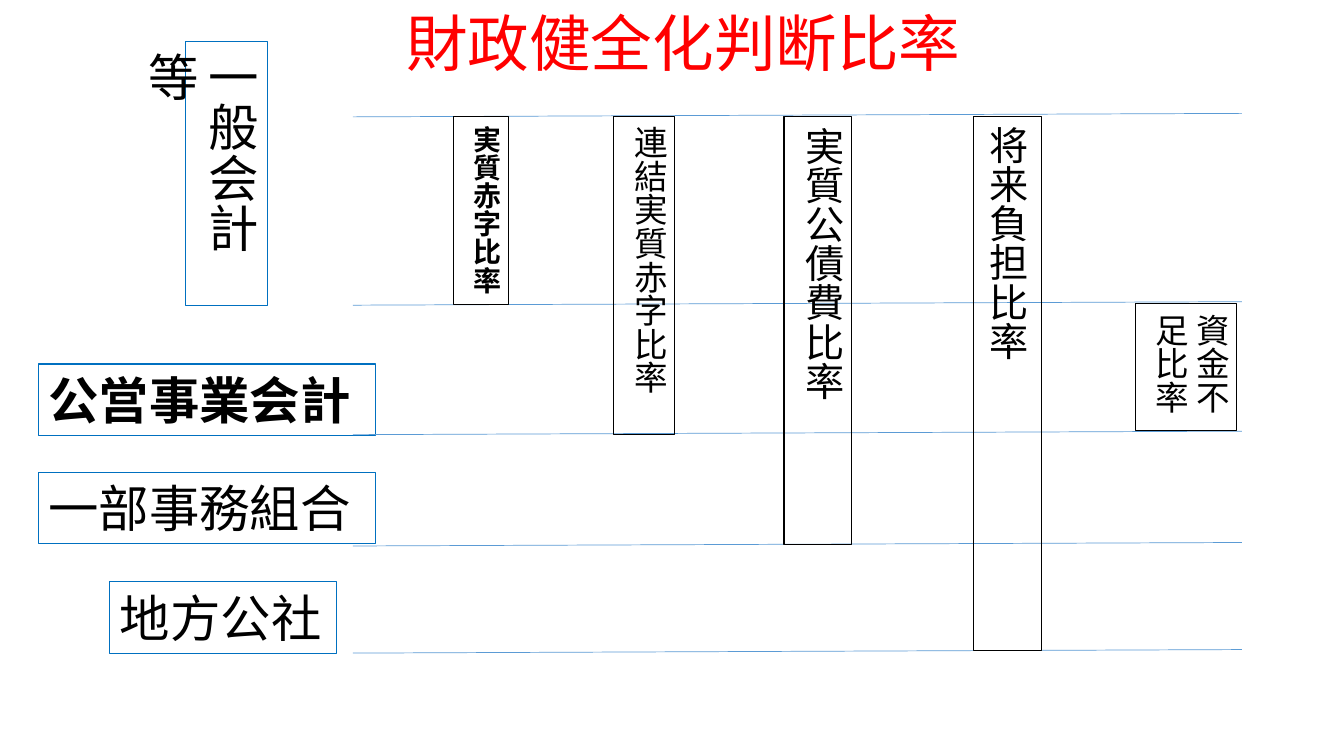
import pptx
import pptx.dml.color
import pptx.enum.shapes
import pptx.enum.text
import pptx.oxml.ns
import pptx.util
from lxml import etree

Pt = pptx.util.Pt
CENTER = pptx.enum.text.PP_ALIGN.CENTER
MIDDLE = pptx.enum.text.MSO_ANCHOR.MIDDLE

FONT = "Calibri"
RED, BLACK, BLUE, PALE_BLUE = "FF0000", "000000", "0070C0", "5B9BD5"

# Text, box (left, top, width, height), bold
HORIZONTAL_ACCOUNTS = [
    ("一部事務組合", (27.5, 337.5, 240.5, 51), False),
    ("地方公社", (78.5, 415.5, 162, 51), False),
    ("公営事業会計", (27.5, 260, 240.5, 51), True),
]

# Text, box, font size, bold, alignment, anchor
RATIOS = [
    ("実質赤字比率", (324, 83, 39, 134.5), 20, True, CENTER, None),
    ("連結実質赤字比率", (438, 83, 44, 227.5), 24, False, CENTER, None),
    ("実質公債費比率", (560, 83.5, 48.5, 305.5), 28, False, CENTER, None),
    ("将来負担比率", (695.5, 83, 48.5, 381.5), 28, False, CENTER, MIDDLE),
    ("資金不足比率", (811, 217, 72.5, 90.5), 24, False, None, None),
]

BOUNDARY_LEFT, BOUNDARY_RIGHT, BOUNDARY_RISE = 252, 887, 2.5
BOUNDARY_TOPS = [83.5, 218, 310.5, 390, 466.5]


def color(hex_value):
    return pptx.dml.color.RGBColor.from_string(hex_value)


def add_label(slide, text, box, size, font_color=BLACK, bold=False,
              border=None, vertical=False, alignment=None, anchor=None):
    """Add a text box, optionally bordered or with vertical East Asian text."""
    shape = slide.shapes.add_textbox(*(Pt(length) for length in box))
    if border:
        shape.line.color.rgb = color(border)
        shape.line.width = Pt(0.75)
    frame = shape.text_frame
    frame.word_wrap = True
    frame.auto_size = pptx.enum.text.MSO_AUTO_SIZE.SHAPE_TO_FIT_TEXT
    if vertical:
        body = shape.element.find(".//" + pptx.oxml.ns.qn("a:bodyPr"))
        body.set("vert", "eaVert")
    if anchor is not None:
        frame.vertical_anchor = anchor
    paragraph = frame.paragraphs[0]
    paragraph.alignment = alignment
    run = paragraph.add_run()
    run.text = text
    run.font.name = FONT
    run.font.size = Pt(size)
    run.font.bold = bold
    run.font.color.rgb = color(font_color)


def add_boundary(slide, top):
    """Add a thin, slightly rising line that closes an account's range."""
    connector = slide.shapes.add_connector(
        pptx.enum.shapes.MSO_CONNECTOR.STRAIGHT,
        Pt(BOUNDARY_LEFT), Pt(top), Pt(BOUNDARY_RIGHT), Pt(top - BOUNDARY_RISE))
    connector.line.color.rgb = color(PALE_BLUE)
    connector.line.width = Pt(0.5)
    properties = connector.element.find(pptx.oxml.ns.qn("p:spPr"))
    etree.SubElement(properties, pptx.oxml.ns.qn("a:effectLst"))


def main():
    presentation = pptx.Presentation()
    presentation.slide_width = Pt(960)
    presentation.slide_height = Pt(540)
    slide = presentation.slides.add_slide(presentation.slide_layouts[6])

    add_label(slide, "財政健全化判断比率", (283, 0, 452, 60.5), 44, RED)
    add_label(slide, "一般会計等", (132.5, 30, 58.5, 188.5), 36,
              border=BLUE, vertical=True)
    for text, box, bold in HORIZONTAL_ACCOUNTS:
        add_label(slide, text, box, 36, bold=bold, border=BLUE)
    for top in BOUNDARY_TOPS:
        add_boundary(slide, top)
    for text, box, size, bold, alignment, anchor in RATIOS:
        add_label(slide, text, box, size, bold=bold, border=BLACK,
                  vertical=True, alignment=alignment, anchor=anchor)

    presentation.save("out.pptx")


if __name__ == "__main__":
    main()
